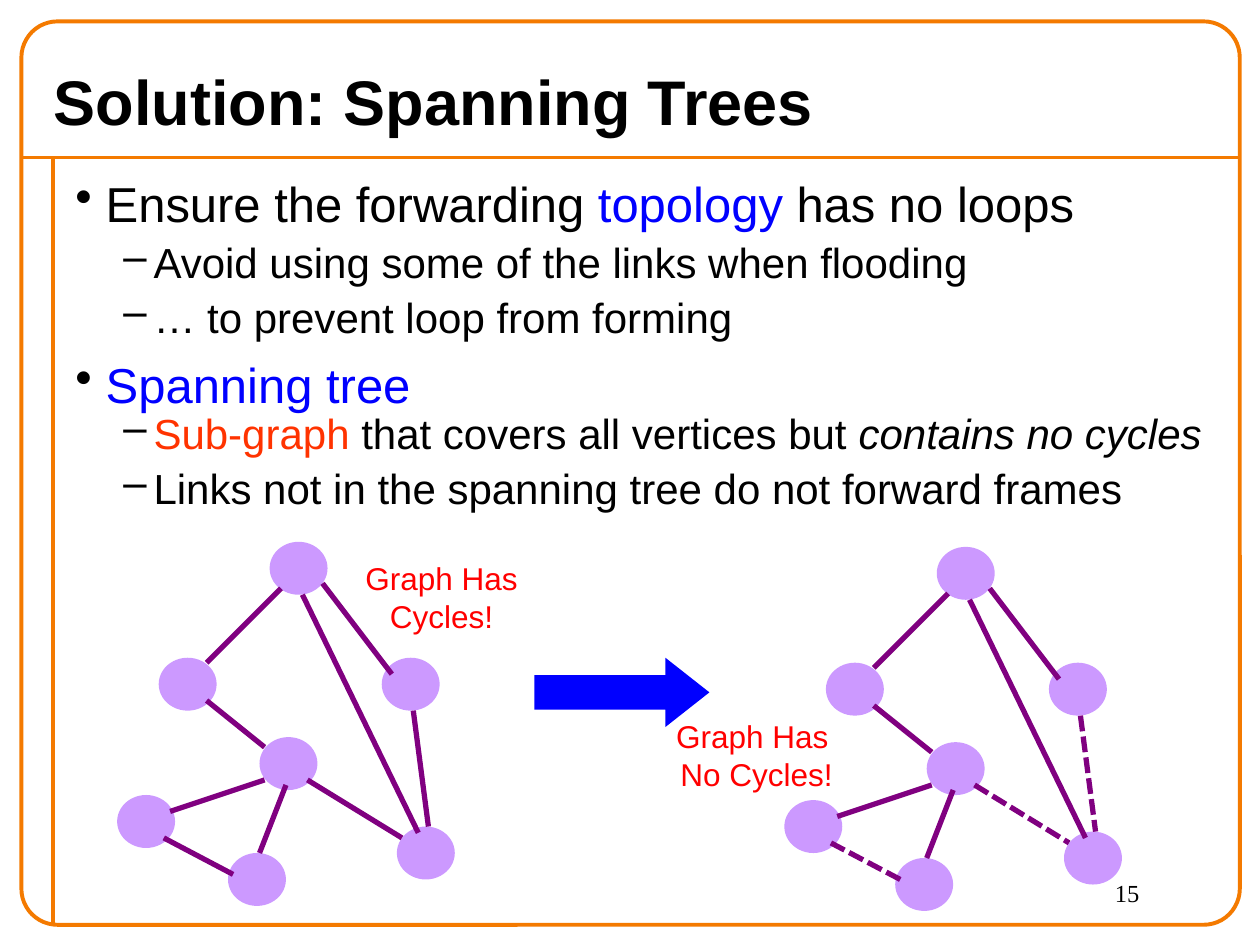
from lxml.etree import SubElement
from pptx import Presentation
from pptx.dml.color import RGBColor
from pptx.enum.dml import MSO_LINE
from pptx.enum.shapes import MSO_CONNECTOR, MSO_SHAPE
from pptx.enum.text import MSO_ANCHOR as Anchor, PP_ALIGN as Align
from pptx.oxml.ns import qn
from pptx.util import Inches, Pt

deck = Presentation()
deck.slide_width, deck.slide_height = Inches(10), Inches(7.5)
page = deck.slides.add_slide(deck.slide_layouts[6])
cell = deck.slide_width / 100
paint = RGBColor.from_string


def grid(*lengths):
    return [round(length * cell) for length in lengths]


def draw_line(shapes, ends, colour, width):
    line = shapes.add_connector(MSO_CONNECTOR.STRAIGHT, *grid(*ends))
    line.line.color.rgb = paint(colour)
    line.line.width = Pt(width)
    SubElement(line._element.spPr, qn("a:effectLst"))
    return line


for ends in [(1.7, 12.5, 98.3, 12.5), (4.2, 12.5, 4.2, 73.3)]:
    draw_line(page.shapes, ends, "F47A00", 2.25)

frame = page.shapes.add_shape(MSO_SHAPE.ROUNDED_RECTANGLE, *grid(1.7, 1.7, 96.7, 71.7))
frame.adjustments[0] = 0.04
frame.shadow.inherit = False
frame.fill.background()
frame.line.color.rgb = paint("F47A00")
frame.line.width = Pt(2.25)

outline = [
    (0, 1, [("Ensure the forwarding ", "000000", False), ("topology", "0000FF", False),
            (" has no loops", "000000", False)]),
    (1, 1, [("Avoid using some of the links when flooding", "000000", False)]),
    (1, 1, [("… to prevent loop from forming", "000000", False)]),
    (0, 0.8, [("Spanning tree", "0000FF", False)]),
    (1, 0.8, [("Sub-graph", "FF3300", False), (" that covers all vertices but ", "000000", False),
              ("contains no cycles", "000000", True)]),
    (1, 1, [("Links not in the spanning tree do not forward frames", "000000", False)]),
]
levels = [(28, 2.4, 50000, "•"), (24, 6.2, 10000, "–")]
body = page.shapes.add_textbox(*grid(5, 13.3, 92.5, 30.5)).text_frame
body.word_wrap = True
for number, (level, spacing, spans) in enumerate(outline):
    size, margin, gap, bullet = levels[level]
    para = body.add_paragraph() if number else body.paragraphs[0]
    para.level = level
    para.line_spacing = spacing
    para.font.size = Pt(size)
    para.font.name = "Arial"
    props = para._p.get_or_add_pPr()
    left, hanging = grid(margin, -2.4)
    props.set("marL", str(left))
    props.set("indent", str(hanging))
    before = SubElement(props, qn("a:spcBef"))
    SubElement(before, qn("a:spcPct"), val=str(gap))
    bullet_colour = SubElement(props, qn("a:buClr"))
    SubElement(bullet_colour, qn("a:srgbClr"), val="000000")
    SubElement(props, qn("a:buChar"), char=bullet)
    props.append(props.find(qn("a:defRPr")))
    for words, colour, italic in spans:
        span = para.add_run()
        span.text = words
        span.font.size = Pt(size)
        span.font.name = "Arial"
        span.font.color.rgb = paint(colour)
        span.font.italic = italic

nodes = [(21.4, 43), (12.6, 52.2), (30.3, 52.2), (20.6, 58.5),
         (31.5, 65.6), (9.3, 63.1), (18.1, 67.7)]
links = [
    (22.3, 46.7, 16.4, 52.6), (25.6, 46.3, 31.1, 53.5), (16.4, 55.6, 21, 59.3),
    (24.4, 61.9, 31.9, 66.5), (32.8, 56.4, 34, 65.6), (24, 47.2, 33.2, 66.1),
    (13.5, 64.4, 21, 61.9), (20.6, 67.7, 22.7, 62.3), (18.5, 69.4, 13, 66.5),
]
for across, down, dotted in [(0, 0, ()), (52.95, 0.4, (3, 4, 8))]:
    graph = page.shapes.add_group_shape().shapes
    for left, top in nodes:
        node = graph.add_shape(MSO_SHAPE.OVAL, *grid(left + across, top + down, 4.6, 4.2))
        node.shadow.inherit = False
        node.fill.solid()
        node.fill.fore_color.rgb = paint("CC99FF")
        node.line.fill.background()
    for number, (x1, y1, x2, y2) in enumerate(links):
        ends = (x1 + across, y1 + down, x2 + across, y2 + down)
        link = draw_line(graph, ends, "800080", 3)
        if number in dotted:
            link.line.dash_style = MSO_LINE.SQUARE_DOT

arrow = page.shapes.add_shape(MSO_SHAPE.RIGHT_ARROW, *grid(42.4, 52.2, 13.9, 5.5))
arrow.adjustments[1] = 0.635
arrow.shadow.inherit = False
arrow.fill.solid()
arrow.fill.fore_color.rgb = paint("0000FF")
arrow.line.fill.background()

labels = [
    ("15", (87.5, 69.2, 10, 4.2), 14, "Times New Roman", "000000", False, Align.LEFT, Anchor.TOP),
    ("Solution: Spanning Trees", (3.3, 4.2, 94.2, 7.5), 36, "Arial", "000000", True,
     Align.LEFT, Anchor.MIDDLE),
    ("Graph Has Cycles!", (24.2, 43.9, 21.7, 7.7), 18, "Arial", "FF0000", False,
     Align.CENTER, Anchor.TOP),
    ("Graph Has \vNo Cycles!", (49.2, 56.4, 21.7, 7.7), 18, "Arial", "FF0000", False,
     Align.CENTER, Anchor.TOP),
]
for words, place, size, face, colour, bold, align, anchor in labels:
    box = page.shapes.add_textbox(*grid(*place)).text_frame
    box.word_wrap = True
    box.vertical_anchor = anchor
    para = box.paragraphs[0]
    para.text = words
    para.alignment = align
    para.font.size = Pt(size)
    para.font.name = face
    para.font.bold = bold
    para.font.color.rgb = paint(colour)

deck.save("out.pptx")
